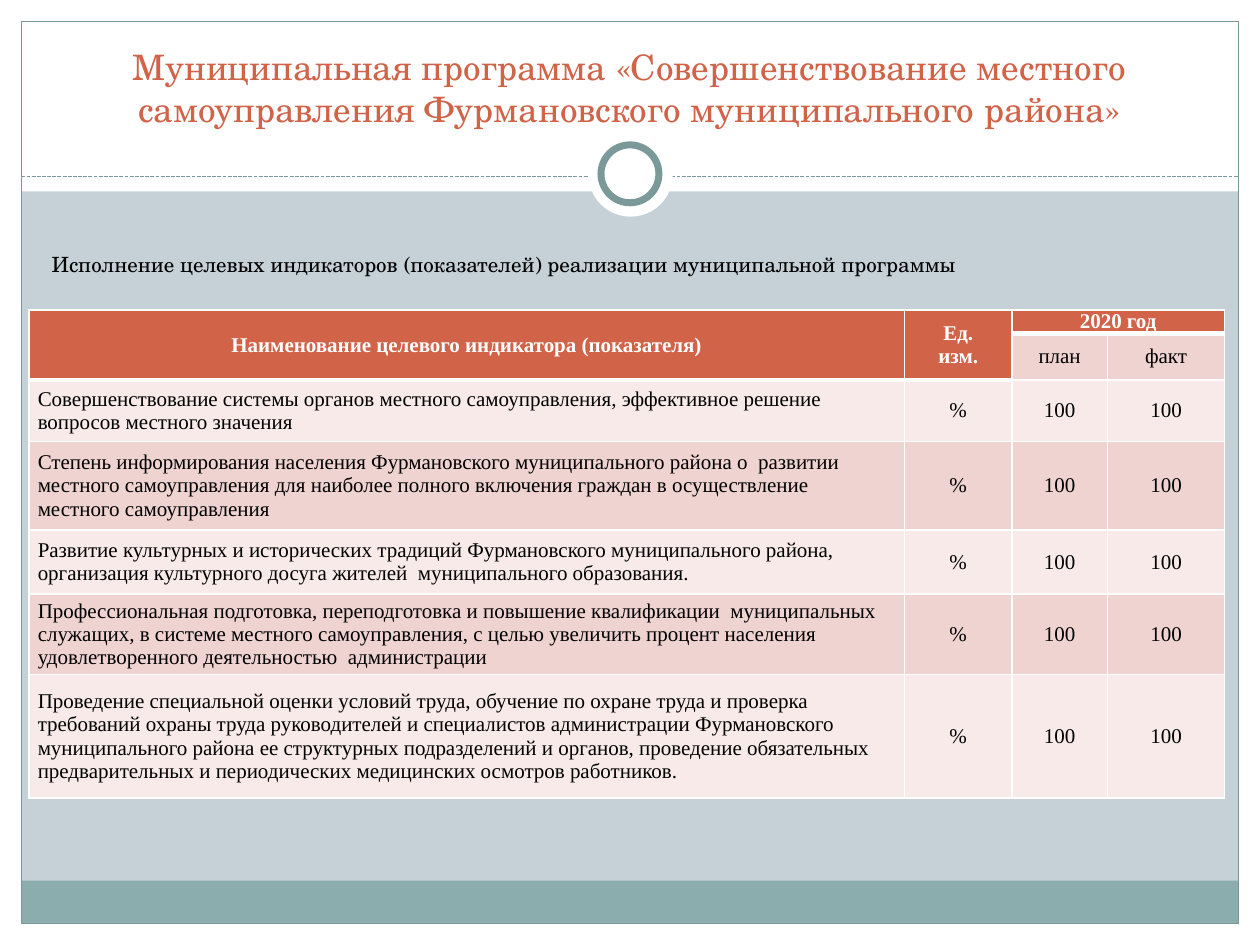
from pptx import Presentation
from pptx.dml.color import RGBColor
from pptx.enum.dml import MSO_LINE
from pptx.enum.shapes import MSO_CONNECTOR, MSO_SHAPE
from pptx.enum.text import MSO_ANCHOR, MSO_AUTO_SIZE, PP_ALIGN
from pptx.oxml.ns import qn
from pptx.util import Inches, Pt
from lxml import etree

RECT, OVAL = MSO_SHAPE.RECTANGLE, MSO_SHAPE.OVAL
STRAIGHT, DASH = MSO_CONNECTOR.STRAIGHT, MSO_LINE.SQUARE_DOT
LEFT, CENTER = PP_ALIGN.LEFT, PP_ALIGN.CENTER
TOP, MIDDLE, BOTTOM = MSO_ANCHOR.TOP, MSO_ANCHOR.MIDDLE, MSO_ANCHOR.BOTTOM
NO_FIT = MSO_AUTO_SIZE.NONE

WIDTH, HEIGHT = Inches(10), Inches(7.5)
GRID_COLUMNS, GRID_ROWS = 100, 75

WHITE, BLACK = "FFFFFF", "000000"
ACCENT, TEAL, FOOTER, BACKDROP = "D16349", "7C999A", "8CADAE", "C5D1D7"
BAND_DARK, BAND_LIGHT = "EED3D0", "F7EAE9"

HEADING = "Муниципальная программа «Совершенствование местного самоуправления Фурмановского муниципального района»"
SUBHEADING = "Исполнение целевых индикаторов (показателей) реализации муниципальной программы"
INDICATORS = [
    "Совершенствование системы органов местного самоуправления, эффективное решение вопросов местного значения",
    "Степень информирования населения Фурмановского муниципального района о  развитии местного самоуправления "
    "для наиболее полного включения граждан в осуществление местного самоуправления",
    "Развитие культурных и исторических традиций Фурмановского муниципального района, "
    "организация культурного досуга жителей  муниципального образования.",
    "Профессиональная подготовка, переподготовка и повышение квалификации  муниципальных служащих, "
    "в системе местного самоуправления, с целью увеличить процент населения "
    "удовлетворенного деятельностью  администрации",
    "Проведение специальной оценки условий труда, обучение по охране труда и проверка требований охраны труда "
    "руководителей и специалистов администрации Фурмановского муниципального района ее структурных подразделений "
    "и органов, проведение обязательных предварительных и периодических медицинских осмотров работников.",
]
HEADER = [
    ["Наименование целевого индикатора (показателя)", "Ед.\nизм.", "2020 год", ""],
    ["", "", "план", "факт"],
]
COLUMN_SPANS = [69.5, 8.5, 7.6, 9.3]
ROW_SPANS = [1.8, 3.7, 4.9, 7, 5.1, 6.4, 9.8]
MERGES = [((0, 0), (1, 0)), ((0, 1), (1, 1)), ((0, 2), (0, 3))]


def rgb(value):
    return RGBColor.from_string(value)


def across(columns):
    return round(WIDTH * columns / GRID_COLUMNS)


def down(rows):
    return round(HEIGHT * rows / GRID_ROWS)


def place(column, row, width, height):
    return across(column), down(row), across(width), down(height)


def apply(target, formats):
    for key, value in formats.items():
        setattr(target, key, value)


def is_header(row, column):
    return row == 0 or (row == 1 and column < 2)


class SlideBuilder:
    display_font = "TeX Gyre Schola"
    table_font = "Times New Roman"

    def __init__(self, slide):
        self.slide = slide
        slide.background.fill.solid()
        slide.background.fill.fore_color.rgb = rgb(BACKDROP)

    def shape(self, kind, box, fill=None, line=None, weight=0.75):
        figure = self.slide.shapes.add_shape(kind, *place(*box))
        figure.shadow.inherit = False
        if fill:
            figure.fill.solid()
            figure.fill.fore_color.rgb = rgb(fill)
        else:
            figure.fill.background()
        if line:
            figure.line.color.rgb = rgb(line)
            figure.line.width = Pt(weight)
        else:
            figure.line.fill.background()

    def dashed_rule(self, start, end, row):
        rule = self.slide.shapes.add_connector(STRAIGHT, across(start), down(row), across(end), down(row))
        rule.line.color.rgb = rgb(TEAL)
        apply(rule.line, {"width": Pt(0.75), "dash_style": DASH})
        etree.SubElement(rule._element.spPr, qn("a:effectLst"))

    def styled_text(self, frame, text, align, size, font, color, bold=False):
        frame.text = text
        for paragraph in frame.paragraphs:
            paragraph.alignment = align
            for run in paragraph.runs:
                apply(run.font, {"size": Pt(size), "name": font, "bold": bold})
                run.font.color.rgb = rgb(color)

    def placeholder(self, holder, box, text, align, anchor, size, color):
        left, top, width, height = place(*box)
        apply(holder, {"left": left, "top": top, "width": width, "height": height})
        frame = holder.text_frame
        apply(frame, {"word_wrap": True, "auto_size": NO_FIT, "vertical_anchor": anchor})
        self.styled_text(frame, text, align, size, self.display_font, color)
        self.slide.shapes._spTree.append(holder._element)
        return frame.paragraphs[0]

    def title(self, box, text):
        self.placeholder(self.slide.shapes.title, box, text, CENTER, BOTTOM, 20, ACCENT)

    def body(self, box, text):
        paragraph = self.placeholder(self.slide.placeholders[1], box, text, LEFT, TOP, 12, BLACK)
        paragraph.space_before = Pt(2.4)
        properties = paragraph._p.get_or_add_pPr()
        properties.set("marL", str(Inches(0.3)))
        properties.set("indent", str(Inches(-0.3)))
        etree.SubElement(properties, qn("a:buNone"))

    def borders(self, cell, weights):
        properties = cell._tc.get_or_add_tcPr()
        for side, weight in weights.items():
            edge = etree.SubElement(properties, qn(f"a:ln{side}"), w=str(Pt(weight)))
            paint = etree.SubElement(edge, qn("a:solidFill"))
            etree.SubElement(paint, qn("a:srgbClr"), val=WHITE)

    def cell(self, cell, row, column, text):
        header = is_header(row, column)
        below_header = row > 0 and is_header(row - 1, column)
        self.borders(cell, {"L": 1, "R": 1, "T": 3 if below_header else 1, "B": 3 if header else 1})
        apply(cell, {"margin_left": Inches(0.07), "margin_right": Inches(0.07),
                     "margin_top": 0, "margin_bottom": 0, "vertical_anchor": MIDDLE})
        cell.fill.solid()
        cell.fill.fore_color.rgb = rgb(ACCENT if header else BAND_DARK if row % 2 else BAND_LIGHT)
        if text:
            align = LEFT if column == 0 and not header else CENTER
            color = WHITE if header else BLACK
            self.styled_text(cell.text_frame, text, align, 12, self.table_font, color, header)

    def table(self, column, row, records):
        box = place(column, row, sum(COLUMN_SPANS), sum(ROW_SPANS))
        table = self.slide.shapes.add_table(len(records), len(COLUMN_SPANS), *box).table
        for table_column, span in zip(table.columns, COLUMN_SPANS):
            table_column.width = across(span)
        for table_row, span in zip(table.rows, ROW_SPANS):
            table_row.height = down(span)
        for first, last in MERGES:
            table.cell(*first).merge(table.cell(*last))
        for r, record in enumerate(records):
            for c, text in enumerate(record):
                self.cell(table.cell(r, c), r, c, text)


def main():
    presentation = Presentation()
    apply(presentation, {"slide_width": WIDTH, "slide_height": HEIGHT})
    builder = SlideBuilder(presentation.slides.add_slide(presentation.slide_layouts[1]))

    margins = [(0, 73.3, 100, 1.7), (0, 0, 100, 15.2), (0, 0, 1.7, 75), (98.3, 0, 1.7, 75)]
    for margin in margins:
        builder.shape(RECT, margin, fill=WHITE)
    builder.shape(RECT, (1.7, 69.9, 96.6, 3.4), fill=FOOTER)
    builder.shape(RECT, (1.7, 1.7, 96.6, 71.6), line=TEAL)
    builder.dashed_rule(1.7, 98.3, 14)
    builder.shape(OVAL, (46.7, 10.5, 6.7, 6.7), fill=WHITE)
    builder.shape(OVAL, (47.7, 11.5, 4.6, 4.6), fill=WHITE, line=TEAL, weight=4)

    builder.title((3.3, 2.5, 93.3, 8.3), HEADING)
    builder.body((3.1, 19.5, 93, 6.7), SUBHEADING)
    builder.table(2.3, 24.6, HEADER + [[name, "%", "100", "100"] for name in INDICATORS])
    presentation.save("out.pptx")


if __name__ == "__main__":
    main()
